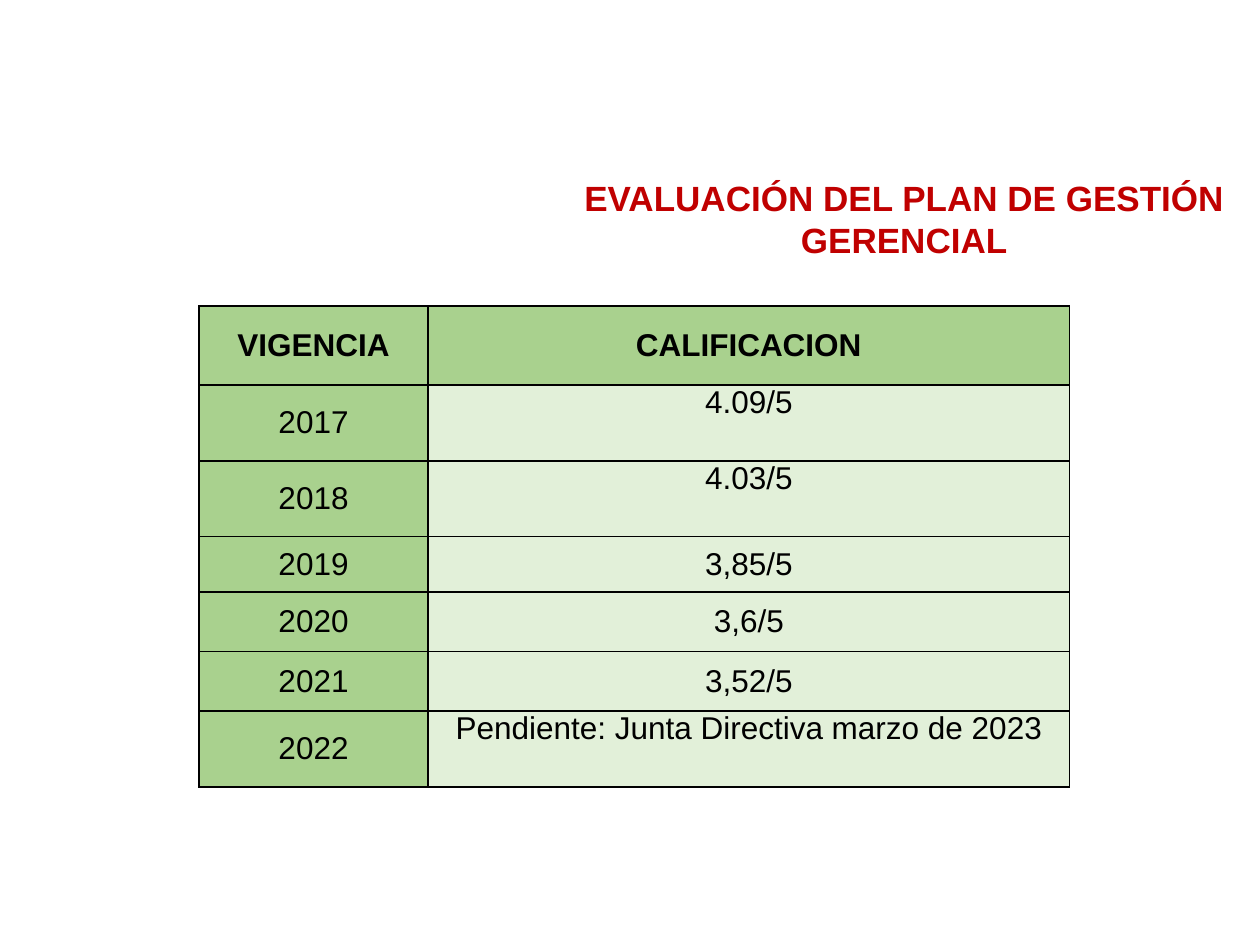
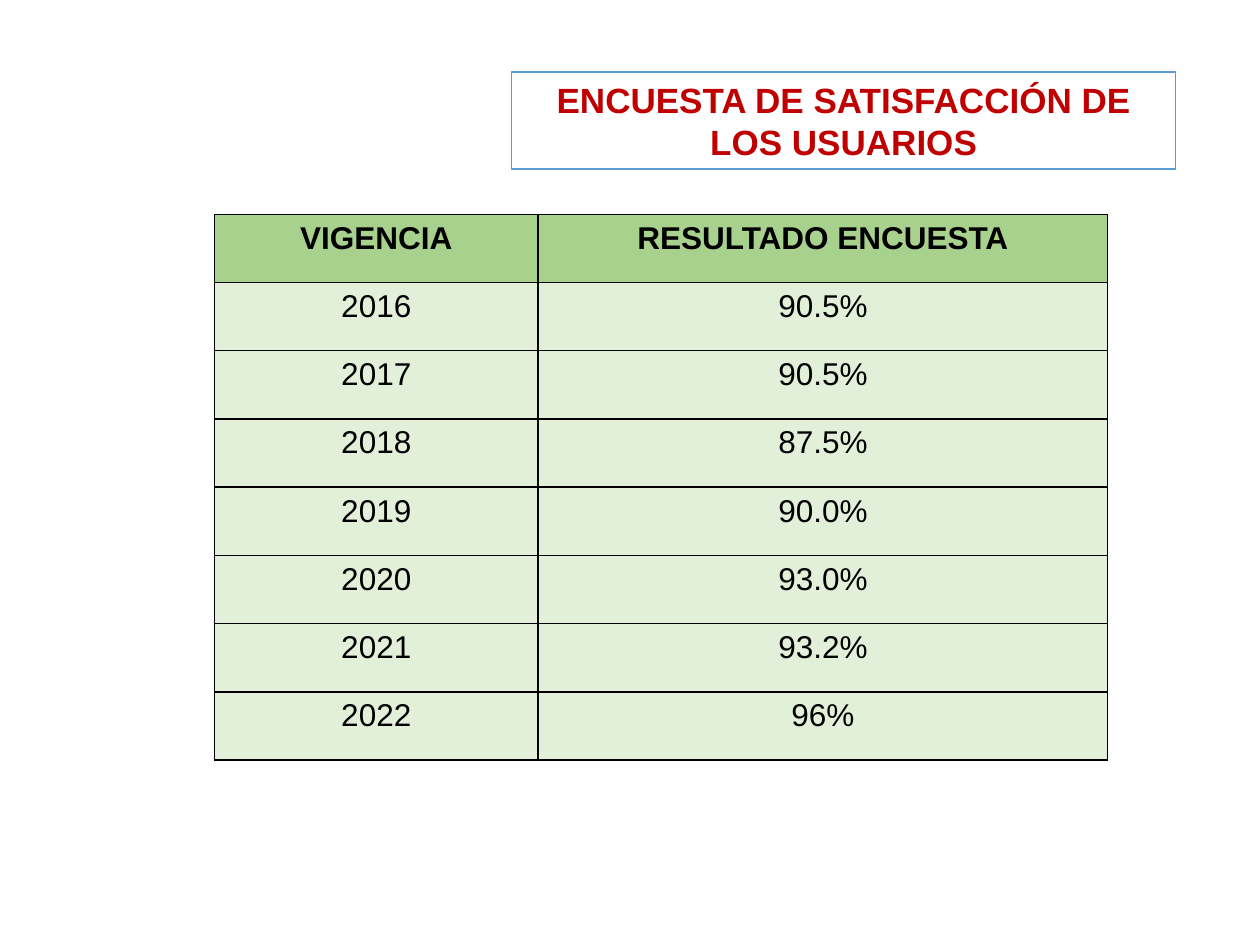
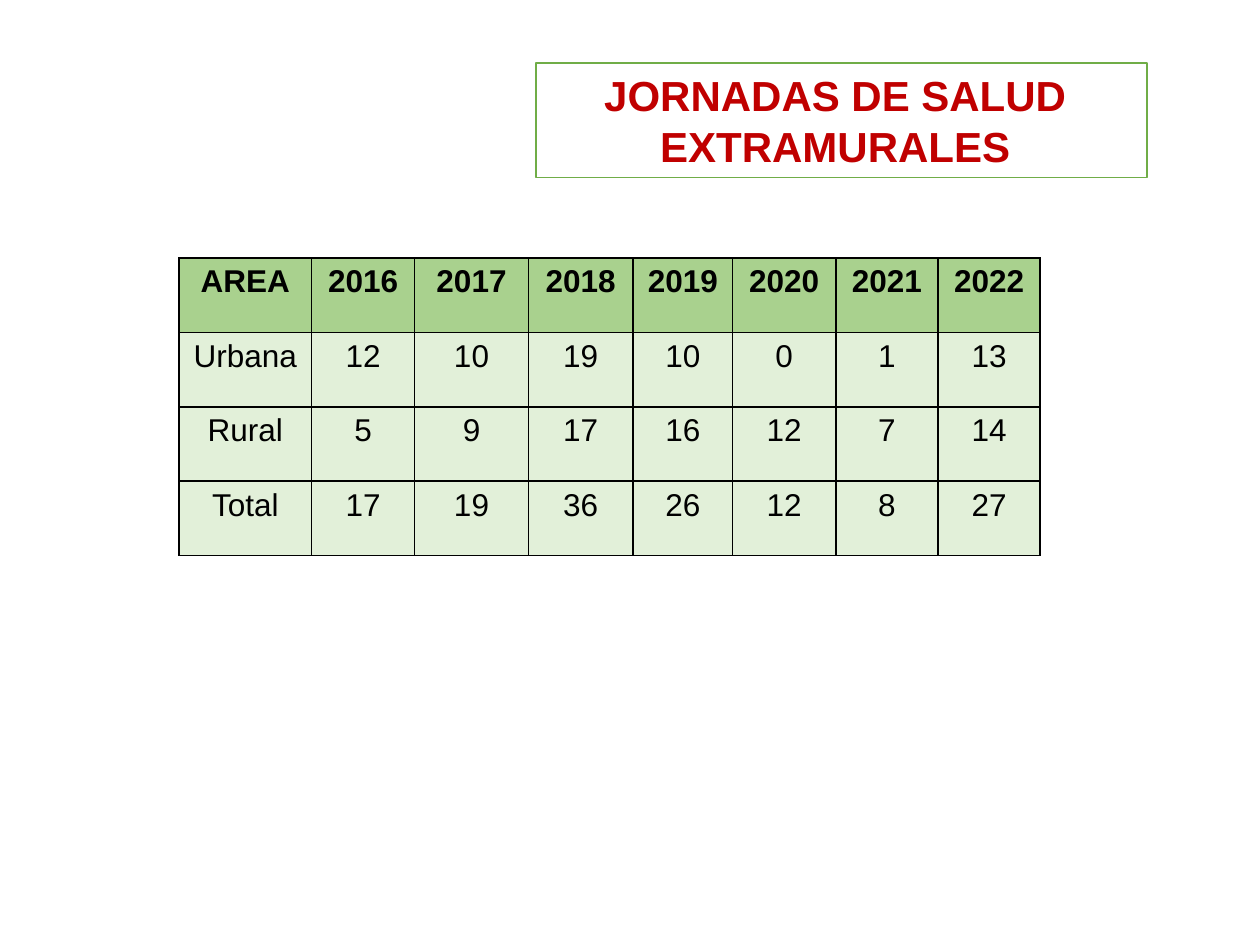
from lxml import etree
from pptx import Presentation
from pptx.dml.color import RGBColor
from pptx.enum.text import MSO_ANCHOR, MSO_AUTO_SIZE, PP_ALIGN
from pptx.oxml.ns import qn
from pptx.util import Cm, Pt

CENTER = PP_ALIGN.CENTER
TOP, MIDDLE = MSO_ANCHOR.TOP, MSO_ANCHOR.MIDDLE
NO_AUTOFIT = MSO_AUTO_SIZE.NONE
TITLE_ONLY = 5

COLORS = {
    "title": "C00000",
    "text": "000000",
    "border": "000000",
    "header": "A9D18E",
    "body": "E2F0D9",
    "white": "FFFFFF",
    "blue": "5B9BD5",
    "green": "70AD47",
}


def rgb(name):
    return RGBColor.from_string(COLORS[name])


def write_text(frame, text, size=18, color="text", bold=False):
    para = frame.paragraphs[0]
    para.alignment = CENTER
    span = para.add_run()
    span.text = text
    span.font.name = "Arial"
    span.font.size = Pt(size)
    span.font.bold = bold
    span.font.color.rgb = rgb(color)


def add_borders(cell):
    properties = cell._tc.get_or_add_tcPr()
    for side in ("lnL", "lnR", "lnT", "lnB"):
        line = etree.SubElement(properties, qn(f"a:{side}"), w=str(Pt(1)))
        fill = etree.SubElement(line, qn("a:solidFill"))
        etree.SubElement(fill, qn("a:srgbClr"), val=COLORS["border"])


class ReportDeck:
    def __init__(self):
        self.deck = Presentation()
        self.deck.slide_width, self.deck.slide_height = Cm(25.4), Cm(19.05)
        self.page = None

    def add_page(self):
        self.page = self.deck.slides.add_slide(self.deck.slide_layouts[TITLE_ONLY])

    def add_title(self, text, left, top, width, height, size=20, outline=None,
                  right_margin=0.25):
        box = self.page.shapes.title
        box.left, box.top, box.width, box.height = map(Cm, (left, top, width, height))
        if outline:
            box.fill.solid()
            box.fill.fore_color.rgb = rgb("white")
            box.line.color.rgb = rgb(outline)
            box.line.width = Pt(1)
        frame = box.text_frame
        frame.word_wrap = True
        frame.auto_size = NO_AUTOFIT
        frame.vertical_anchor = MIDDLE
        frame.margin_right = Cm(right_margin)
        write_text(frame, text, size=size, color="title", bold=True)

    def add_table(self, rows, left, top, widths, heights, has_header=True,
                  shaded_years=False, top_cells=()):
        """Draw a grid; shaded_years tints column one, drops insets and centres cells
        vertically, except those whose text is in top_cells."""
        table = self.page.shapes.add_table(
            len(rows), len(widths), Cm(left), Cm(top),
            Cm(sum(widths)), Cm(sum(heights))).table
        for column, width in zip(table.columns, widths):
            column.width = Cm(width)
        for row, height in zip(table.rows, heights):
            row.height = Cm(height)
        for row_index, values in enumerate(rows):
            is_header = has_header and row_index == 0
            for column_index, value in enumerate(values):
                cell = table.cell(row_index, column_index)
                tinted = is_header or (shaded_years and column_index == 0)
                add_borders(cell)
                cell.fill.solid()
                cell.fill.fore_color.rgb = rgb("header" if tinted else "body")
                cell.vertical_anchor = TOP
                if shaded_years:
                    cell.margin_left = cell.margin_right = 0
                    cell.margin_top = cell.margin_bottom = 0
                    if value not in top_cells:
                        cell.vertical_anchor = MIDDLE
                write_text(cell.text_frame, value, bold=is_header)


def add_management_page(report):
    scores = [
        ("VIGENCIA", "CALIFICACION"),
        ("2017", "4.09/5"),
        ("2018", "4.03/5"),
        ("2019", "3,85/5"),
        ("2020", "3,6/5"),
        ("2021", "3,52/5"),
    ]
    pending = "Pendiente: Junta Directiva marzo de 2023"
    left, top, widths = 4.01, 6.17, (4.62, 12.93)
    heights = (1.59, 1.53, 1.53, 1.11, 1.2, 1.2)
    report.add_page()
    report.add_title("EVALUACIÓN DEL PLAN DE GESTIÓN GERENCIAL",
                     11.05, 3.43, 14.35, 1.96)
    report.add_table(scores, left, top, widths, heights, shaded_years=True,
                     top_cells=("4.09/5", "4.03/5"))
    report.add_table([("2022", pending)], left, top + sum(heights), widths, (1.53,),
                     has_header=False, shaded_years=True, top_cells=(pending,))


def add_survey_page(report):
    results = [
        ("VIGENCIA", "RESULTADO ENCUESTA"),
        ("2016", "90.5%"),
        ("2017", "90.5%"),
        ("2018", "87.5%"),
        ("2019", "90.0%"),
        ("2020", "93.0%"),
        ("2021", "93.2%"),
        ("2022", "96%"),
    ]
    report.add_page()
    report.add_title("ENCUESTA DE SATISFACCIÓN DE LOS USUARIOS",
                     10.31, 1.45, 13.39, 1.96, outline="blue")
    report.add_table(results, 4.32, 4.32, (6.53, 11.48),
                     [11 / len(results)] * len(results))


def add_outreach_page(report):
    sessions = [
        ("AREA", "2016", "2017", "2018", "2019", "2020", "2021", "2022"),
        ("Urbana", "12", "10", "19", "10", "0", "1", "13"),
        ("Rural", "5", "9", "17", "16", "12", "7", "14"),
        ("Total", "17", "19", "36", "26", "12", "8", "27"),
    ]
    report.add_page()
    report.add_title("JORNADAS DE SALUD EXTRAMURALES", 10.8, 1.27, 12.32, 2.31,
                     size=24, outline="green", right_margin=0.5)
    report.add_table(sessions, 3.61, 5.2,
                     (2.67, 2.08, 2.29, 2.11, 2.01, 2.08, 2.06, 2.06),
                     [1.5] * len(sessions))


def main():
    report = ReportDeck()
    add_management_page(report)
    add_survey_page(report)
    add_outreach_page(report)
    report.deck.save("out.pptx")


if __name__ == "__main__":
    main()
